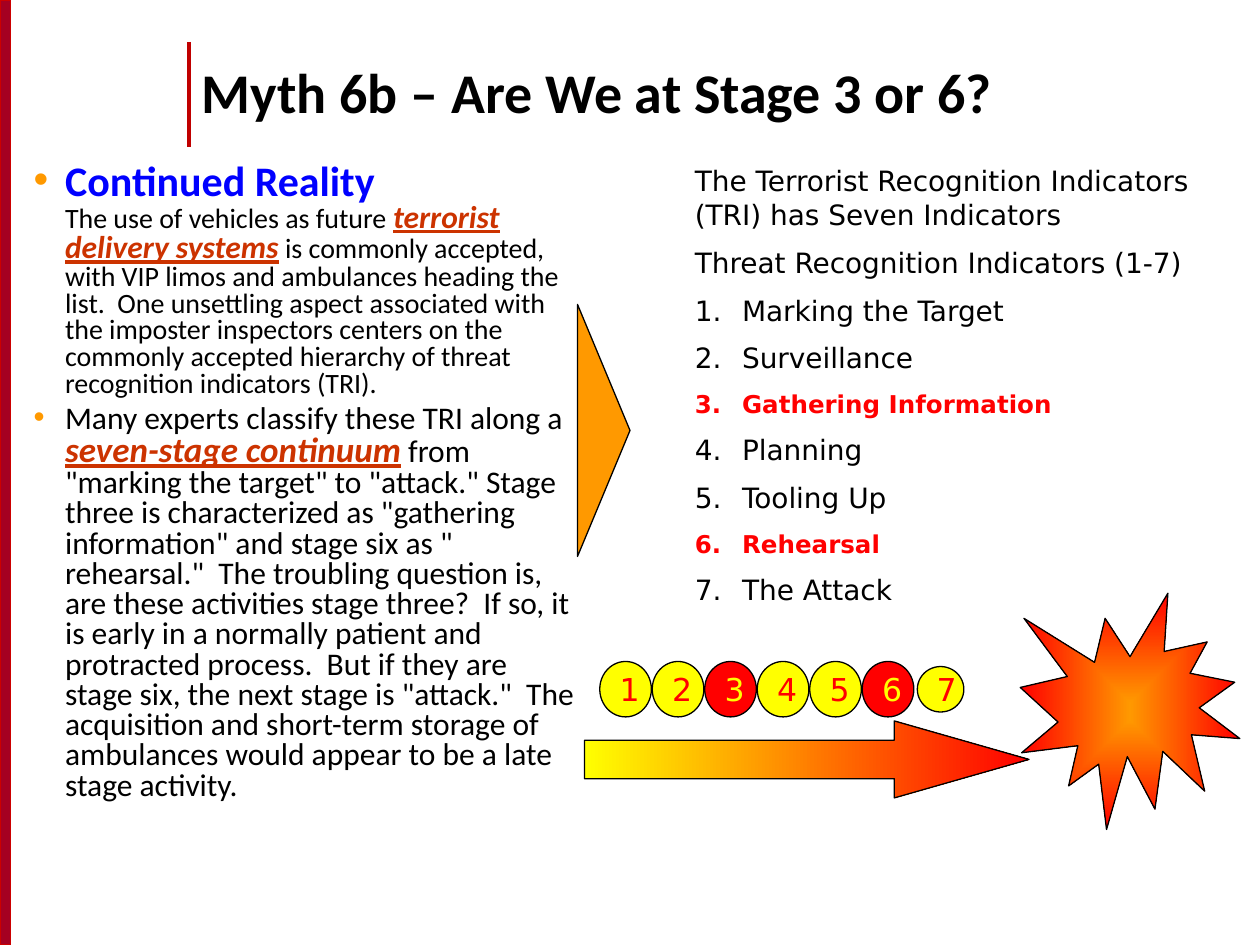
"""Build the slide on the seven stages of the threat recognition indicators."""
from dataclasses import dataclass

from lxml.etree import SubElement
from pptx import Presentation
from pptx.dml.color import RGBColor
from pptx.enum.shapes import MSO_CONNECTOR, MSO_SHAPE
from pptx.enum.text import MSO_ANCHOR, MSO_AUTO_SIZE, PP_ALIGN
from pptx.oxml.ns import qn
from pptx.util import Pt

BLACK = RGBColor(0x00, 0x00, 0x00)
BLUE = RGBColor(0x00, 0x00, 0xFF)
RED = RGBColor(0xFF, 0x00, 0x00)
YELLOW = RGBColor(0xFF, 0xFF, 0x00)
ORANGE = RGBColor(0xFF, 0x99, 0x00)
RUST = RGBColor(0xCC, 0x33, 0x00)
CRIMSON = RGBColor(0xA5, 0x00, 0x21)
BAR_EDGE = RGBColor(0xCC, 0x00, 0x00)
RULE = RGBColor(0xC0, 0x00, 0x00)
SANS = "DejaVu Sans"


@dataclass
class Box:
    left: float
    top: float
    width: float
    height: float

    def lengths(self) -> tuple:
        return Pt(self.left), Pt(self.top), Pt(self.width), Pt(self.height)


@dataclass
class Stage:
    name: str
    box: Box
    alert: bool = False


NAMES = ["Marking the Target", "Surveillance", "Gathering Information", "Planning",
         "Tooling Up", "Rehearsal", "The Attack"]
ALERTS = {"Gathering Information", "Rehearsal"}
STAGES = [Stage(name, Box(342.7 + 30 * i, 378, 29.5, 31.7), name in ALERTS)
          for i, name in enumerate(NAMES)]
STAGES[-1].box = Box(524.2, 380.9, 26.6, 26)


def add_run(p, text: str, size: float = 16, color: RGBColor = BLACK, font: str = "Calibri",
            bold: bool = False, italic: bool = False, underline: bool = False) -> None:
    r = p.add_run()
    r.text = text
    f = r.font
    f.name, f.size, f.bold, f.italic, f.underline = font, Pt(size), bold, italic, underline
    f.color.rgb = color


def set_indent(p, indent: float) -> None:
    pPr = p._p.get_or_add_pPr()
    pPr.set("marL", str(Pt(indent)))
    pPr.set("indent", str(-Pt(indent)))


def set_bullet(p) -> None:
    set_indent(p, 18)
    pPr = p._p.get_or_add_pPr()
    SubElement(SubElement(pPr, qn("a:buClr")), qn("a:srgbClr"), val=str(ORANGE))
    SubElement(pPr, qn("a:buChar"), char="•")


def add_shape(shapes, kind: MSO_SHAPE, box: Box, fill: RGBColor = None,
              line: RGBColor = BLACK, weight: float = 0.75):
    sp = shapes.add_shape(kind, *box.lengths())
    sp.shadow.inherit = False
    if fill is not None:
        sp.fill.solid()
        sp.fill.fore_color.rgb = fill
    sp.line.color.rgb = line
    sp.line.width = Pt(weight)
    return sp


def set_gradient(sp, start: RGBColor, end: RGBColor, from_center: bool = False) -> None:
    sp.fill.gradient()
    sp.fill.gradient_angle = 0
    for stop, color, position in zip(sp.fill.gradient_stops, (start, end), (0, 1)):
        stop.color.rgb = color
        stop.position = position
    if from_center:
        grad = sp._element.spPr.find(qn("a:gradFill"))
        grad.remove(grad.find(qn("a:lin")))
        shade = SubElement(grad, qn("a:path"), path="shape")
        SubElement(shade, qn("a:fillToRect"), l="50000", t="50000", r="50000", b="50000")


def add_frame(s) -> None:
    add_shape(s.shapes, MSO_SHAPE.RECTANGLE, Box(0, 0, 6, 540), CRIMSON, BAR_EDGE, 1)
    rule = s.shapes.add_connector(MSO_CONNECTOR.STRAIGHT, Pt(108), Pt(24), Pt(108), Pt(84))
    rule.line.color.rgb = RULE
    rule.line.width = Pt(2.25)
    SubElement(rule._element.spPr, qn("a:effectLst"))


def place(sp, box: Box, anchor: MSO_ANCHOR):
    sp.left, sp.top, sp.width, sp.height = box.lengths()
    tf = sp.text_frame
    tf.auto_size = MSO_AUTO_SIZE.NONE
    tf.vertical_anchor = anchor
    return tf


def fill_title(sp) -> None:
    p = place(sp, Box(108, 18, 594, 74), MSO_ANCHOR.MIDDLE).paragraphs[0]
    p.alignment = PP_ALIGN.LEFT
    p.line_spacing = 0.85
    add_run(p, "Myth 6b – Are We at Stage 3 or 6?", size=32, bold=True)


def fill_body(sp) -> None:
    tf = place(sp, Box(12, 90, 324, 312), MSO_ANCHOR.TOP)
    stress = dict(color=RUST, bold=True, italic=True, underline=True)
    first, second = tf.paragraphs[0], tf.add_paragraph()
    for p, gap in ((first, 0), (second, 3.6)):
        set_bullet(p)
        p.line_spacing = 0.8
        p.space_before = Pt(gap)
    add_run(first, "Continued Reality", size=24, color=BLUE, bold=True)
    first.add_line_break()
    add_run(first, "The use of vehicles as future ")
    add_run(first, "terrorist delivery systems", size=18, **stress)
    add_run(first, " is commonly accepted, with VIP limos and ambulances heading the list.  "
            "One unsettling aspect associated with the imposter inspectors centers on the "
            "commonly accepted hierarchy of threat recognition indicators (TRI).")
    add_run(second, "Many experts classify these TRI along a ", size=18)
    add_run(second, "seven-stage continuum", size=20, **stress)
    add_run(second, ' from "marking the target" to "attack." Stage three is characterized as '
            '"gathering information" and stage six as " rehearsal."  The troubling question '
            'is, are these activities stage three?  If so, it is early in a normally patient '
            'and protracted process.  But if they are stage six, the next stage is "attack."  '
            'The acquisition and short-term storage of ambulances would appear to be a late '
            'stage activity.', size=18)


def add_indicators(s) -> None:
    tf = s.shapes.add_textbox(*Box(390, 90, 318, 333).lengths()).text_frame
    tf.word_wrap = True
    add_run(tf.paragraphs[0], "The Terrorist Recognition Indicators (TRI) has Seven Indicators",
            font=SANS)
    p = tf.add_paragraph()
    set_indent(p, 27)
    p.space_before = Pt(8.2)
    add_run(p, "Threat Recognition Indicators (1-7)", font=SANS)
    for stage in STAGES:
        p = tf.add_paragraph()
        set_indent(p, 27)
        SubElement(p._p.get_or_add_pPr(), qn("a:buAutoNum"), type="arabicPeriod")
        p.space_before = Pt(8.2)
        add_run(p, stage.name, font=SANS, size=14 if stage.alert else 16,
                color=RED if stage.alert else BLACK, bold=stage.alert)


def add_timeline(s) -> None:
    group = s.shapes.add_group_shape()
    for number, stage in enumerate(STAGES, 1):
        fill, color = (RED, YELLOW) if stage.alert else (YELLOW, RED)
        sp = add_shape(group.shapes, MSO_SHAPE.OVAL, stage.box, fill)
        tf = sp.text_frame
        tf.word_wrap = False
        tf.auto_size = MSO_AUTO_SIZE.SHAPE_TO_FIT_TEXT
        tf.vertical_anchor = MSO_ANCHOR.MIDDLE
        p = tf.paragraphs[0]
        p.alignment = PP_ALIGN.LEFT
        add_run(p, str(number), size=18, color=color, font=SANS)
    arrow = add_shape(s.shapes, MSO_SHAPE.RIGHT_ARROW, Box(334, 412, 254, 44))
    arrow.adjustments[0], arrow.adjustments[1] = 0.5, 1.75
    set_gradient(arrow, YELLOW, RED)


def main() -> None:
    prs = Presentation()
    prs.slide_width, prs.slide_height = Pt(720), Pt(540)
    s = prs.slides.add_slide(prs.slide_layouts[1])
    add_frame(s)
    fill_title(s.shapes.title)
    fill_body(s.placeholders[1])
    pointer = add_shape(s.shapes, MSO_SHAPE.ISOSCELES_TRIANGLE, Box(273, 231, 144, 30), ORANGE)
    pointer.rotation = 90
    add_indicators(s)
    blast = add_shape(s.shapes, MSO_SHAPE.EXPLOSION1, Box(583, 339, 125.5, 135))
    set_gradient(blast, ORANGE, RED, from_center=True)
    add_timeline(s)
    prs.save("out.pptx")


if __name__ == "__main__":
    main()
